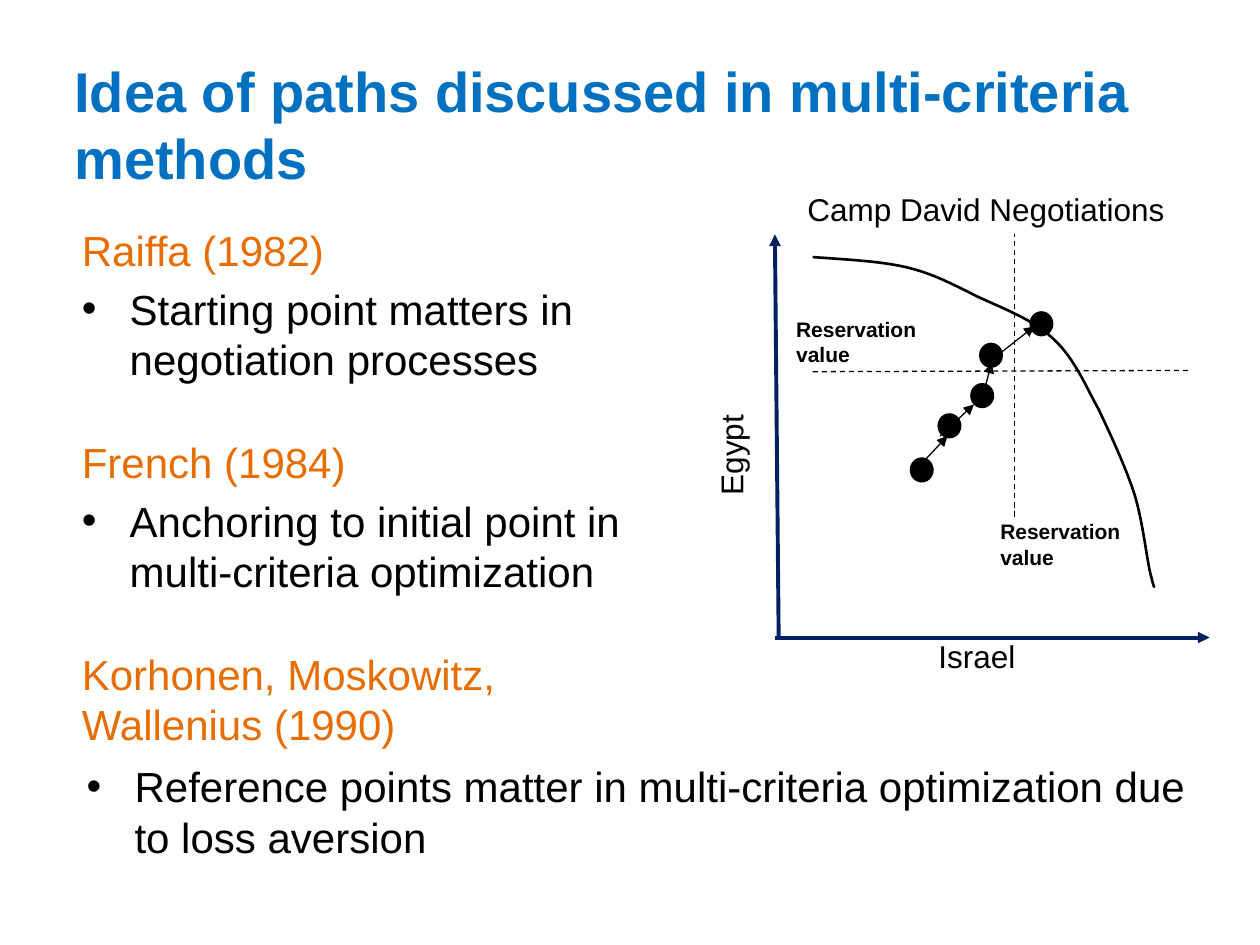
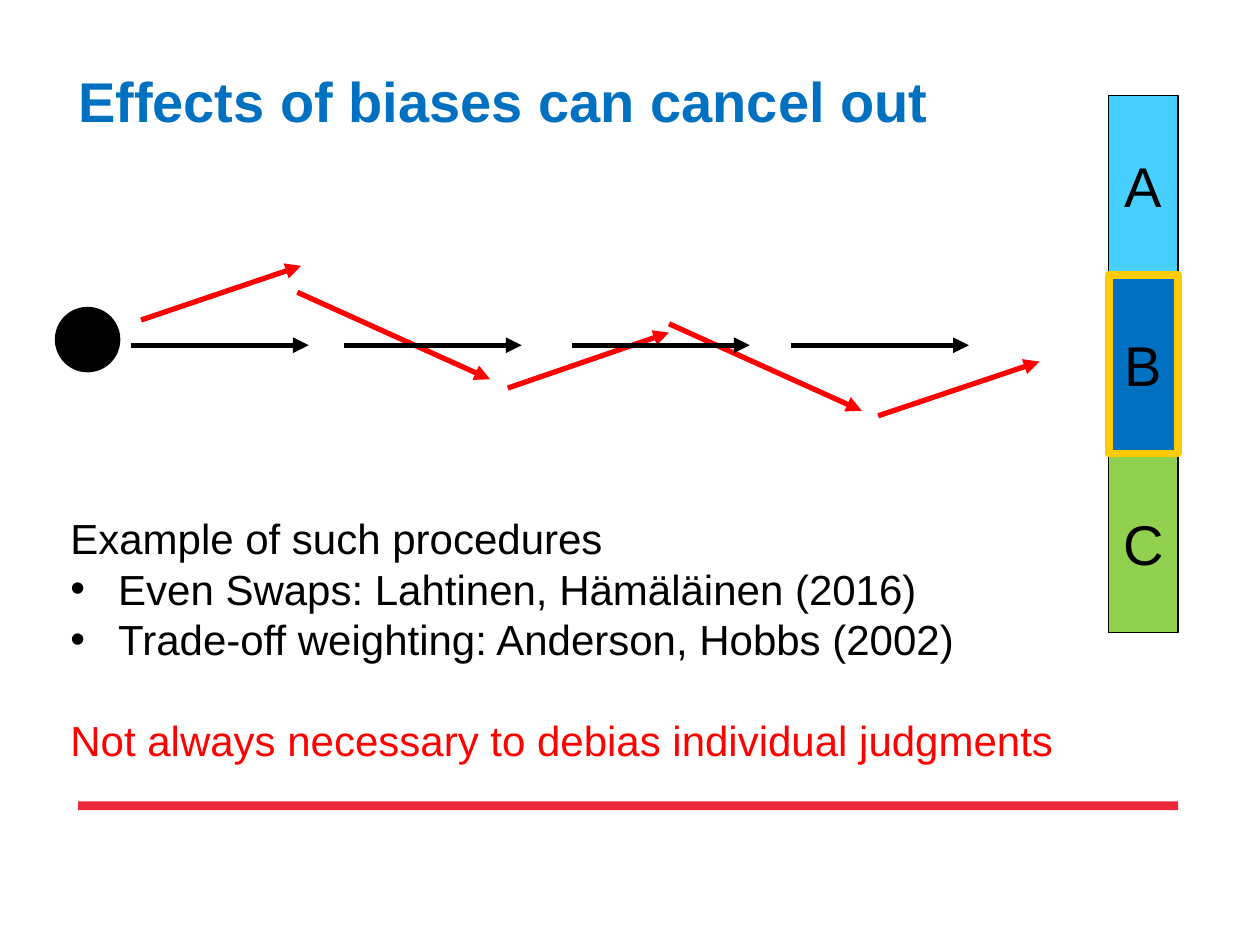
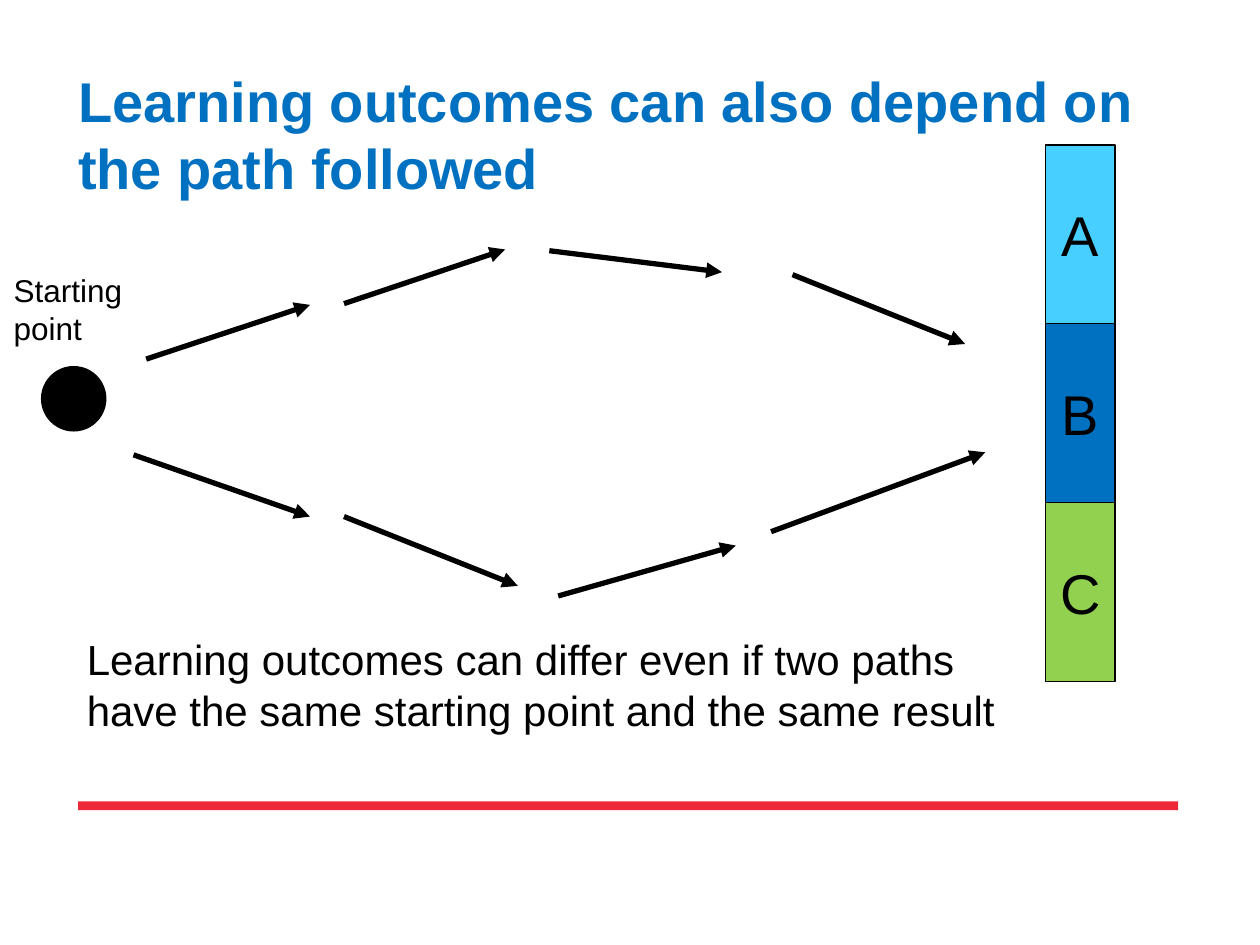
from lxml.etree import SubElement
from pptx import Presentation
from pptx.dml.color import RGBColor
from pptx.enum.dml import MSO_LINE
from pptx.enum.shapes import MSO_CONNECTOR, MSO_SHAPE
from pptx.enum.text import MSO_ANCHOR, PP_ALIGN
from pptx.oxml.ns import qn
from pptx.util import Inches, Pt

BLACK = RGBColor(0x00, 0x00, 0x00)
BLUE = RGBColor(0x00, 0x70, 0xC0)
ORANGE = RGBColor(0xE7, 0x6D, 0x00)
NAVY = RGBColor(0x00, 0x20, 0x60)
RED = RGBColor(0xFF, 0x00, 0x00)
BAND = RGBColor(0xED, 0x29, 0x39)
SKY = RGBColor(0x47, 0xCF, 0xFF)
GREEN = RGBColor(0x92, 0xD0, 0x50)
GOLD = RGBColor(0xFE, 0xCB, 0x00)

WIDE, HIGH = 10, 7.5
HEAD = {"size": Pt(32), "bold": True}
BODY = {"size": Pt(24), "bold": False}
LABEL = {"size": Pt(18), "bold": False}
SMALL = {"size": Pt(12), "bold": True}
LETTER = {"size": Pt(32), "bold": False}

# Paragraphs: text, colour, bulleted, space before in points
STUDIES = [
    ("Raiffa (1982)", ORANGE, False, 0),
    ("Starting point matters in negotiation processes", BLACK, True, 4.8),
    ("French (1984)", ORANGE, False, 30),
    ("Anchoring to initial point in multi-criteria optimization", BLACK, True, 4.8),
    ("Korhonen, Moskowitz, Wallenius (1990)", ORANGE, False, 30),
]
LOSS = [("Reference points matter in multi-criteria optimization due to loss aversion",
         BLACK, True, 0)]
CASES = [
    ("Example of such procedures", BLACK, False, 0),
    ("Even Swaps: Lahtinen, Hämäläinen (2016)", BLACK, True, 0),
    ("Trade-off weighting: Anderson, Hobbs (2002)", BLACK, True, 0),
    ("Not always necessary to debias individual judgments", RED, False, 28.8),
]
RESULT = [("Learning outcomes can differ even if two paths have the same "
           "starting point and the same result", BLACK, False, 0)]

# Chart labels: lines, box, format, direction
LABELS = [
    (["Camp David Negotiations"], (6.31, 1.46, 3.1, 0.4), LABEL, None),
    (["Israel"], (7.35, 5.01, 0.93, 0.48), LABEL, None),
    (["Egypt"], (5.6, 2.89, 0.74, 1.14), LABEL, "vert270"),
    (["Reservation", "value"], (6.22, 2.46, 1.21, 0.5), SMALL, None),
    (["Reservation", "value"], (7.84, 4.07, 1.21, 0.5), SMALL, None),
]
AXES = [((6.15, 5.06), (9.6, 5.06)), ((6.18, 5.06), (6.15, 1.86))]
LIMITS = [((6.45, 2.95), (9.45, 2.94)), ((8.05, 4.1), (8.05, 1.86))]
DOTS = [(7.22, 3.63), (7.44, 3.28), (7.7, 3.04), (7.77, 2.72), (8.17, 2.47)]
STEPS = [((7.24, 3.76), (7.52, 3.46)), ((7.46, 3.46), (7.73, 3.21)),
         ((7.82, 3.07), (7.87, 2.88)), ((7.93, 2.81), (8.21, 2.59))]
# Bezier knots: a start, then two handles and an end for each piece
FRONTIER = [
    (6.45, 2.04),
    (6.71, 2.06), (6.97, 2.07), (7.19, 2.12),
    (7.4, 2.17), (7.55, 2.25), (7.75, 2.35),
    (7.94, 2.44), (8.19, 2.53), (8.35, 2.68),
    (8.52, 2.83), (8.61, 3.05), (8.72, 3.25),
    (8.82, 3.46), (8.93, 3.7), (9, 3.91),
    (9.07, 4.13), (9.1, 4.43), (9.13, 4.55),
    (9.16, 4.67), (9.16, 4.66), (9.16, 4.65),
]

BIASED = [((2.36, 2.32), (3.89, 3.01)), ((1.12, 2.54), (2.39, 2.11)),
          ((4.03, 3.08), (5.31, 2.64)), ((5.31, 2.57), (6.84, 3.26)),
          ((6.97, 3.3), (8.25, 2.87))]
STRAIGHT = [((x, 2.74), (x + 1.41, 2.74)) for x in (1.04, 2.73, 4.54, 6.28)]
UPPER = [((1.16, 2.85), (2.46, 2.42)), ((2.73, 2.41), (4.01, 1.98)),
         ((4.36, 1.99), (5.73, 2.16)), ((6.29, 2.18), (7.66, 2.73))]
LOWER = [((1.06, 3.61), (2.46, 4.1)), ((2.73, 4.1), (4.11, 4.65)),
         ((4.43, 4.73), (5.84, 4.33)), ((6.12, 4.22), (7.82, 3.59))]

OPTIONS = [("A", SKY), ("B", BLUE), ("C", GREEN)]
CELL_W, CELL_H = 0.55, 1.42


def style(font, form, color):
    for key, value in {"name": "Arial", **form}.items():
        setattr(font, key, value)
    font.color.rgb = color


def write(slide, box, paras, form, inset=(0.1, 0.05), turn=None):
    """Add a text box; turn is the direction of its text."""
    frame = slide.shapes.add_textbox(*map(Inches, box)).text_frame
    frame.word_wrap = True
    frame.margin_left = frame.margin_right = Inches(inset[0])
    frame.margin_top = frame.margin_bottom = Inches(inset[1])
    if turn:
        frame._txBody.bodyPr.set("vert", turn)
    for i, (text, color, bullet, gap) in enumerate(paras):
        para = frame.add_paragraph() if i else frame.paragraphs[0]
        if bullet:
            props = para._p.get_or_add_pPr()
            props.set("marL", str(Inches(0.38)))
            props.set("indent", str(-Inches(0.38)))
            SubElement(props, qn("a:buFont"), typeface="Arial")
            SubElement(props, qn("a:buChar"), char="•")
        if gap:
            para.space_before = Pt(gap)
        run = para.add_run()
        run.text = text
        style(run.font, form, color)


def plain(lines):
    return [(line, BLACK, False, 0) for line in lines]


def draw(slide, kind, box, fill, line=None, width=0.75):
    shape = slide.shapes.add_shape(kind, *map(Inches, box))
    shape.shadow.inherit = False
    shape.fill.solid()
    shape.fill.fore_color.rgb = fill
    if line is None:
        shape.line.fill.background()
    else:
        shape.line.color.rgb = line
        shape.line.width = Pt(width)
    return shape


def link(slide, pairs, color=BLACK, width=3, dash=False):
    """Draw arrows, or dashed lines without heads."""
    for start, end in pairs:
        wire = slide.shapes.add_connector(
            MSO_CONNECTOR.STRAIGHT, *map(Inches, start + end))
        wire.line.color.rgb = color
        wire.line.width = Pt(width)
        if dash:
            wire.line.dash_style = MSO_LINE.DASH
        else:
            SubElement(wire.line._get_or_add_ln(), qn("a:tailEnd"), type="triangle")
        SubElement(wire._element.spPr, qn("a:effectLst"))


def curve(slide, knots, parts=12):
    """Draw a smooth open line through Bezier knots."""
    points = [knots[0]]
    for i in range(0, len(knots) - 1, 3):
        for n in range(1, parts + 1):
            t = n / parts
            rates = ((1 - t) ** 3, 3 * t * (1 - t) ** 2, 3 * t * t * (1 - t), t ** 3)
            points.append(tuple(
                sum(rate * knot[axis] for rate, knot in zip(rates, knots[i:i + 4]))
                for axis in (0, 1)))
    spots = [(Inches(x), Inches(y)) for x, y in points]
    build = slide.shapes.build_freeform(*spots[0])
    build.add_line_segments(spots[1:], close=False)
    shape = build.convert_to_shape()
    shape.shadow.inherit = False
    shape.fill.background()
    shape.line.color.rgb = BLACK
    shape.line.width = Pt(1.5)


def start(deck, title, box, band=True):
    """Add a slide with its title and band."""
    slide = deck.slides.add_slide(deck.slide_layouts[6])
    if band:
        draw(slide, MSO_SHAPE.RECTANGLE, (0.62, 6.36, 8.73, 0.07), BAND)
    write(slide, box, [(title, BLUE, False, 0)], HEAD, inset=(0, 0))
    return slide


def stack(slide, left, top, chosen=None):
    """Pile up the options, with the chosen one framed on top of the others."""
    rows = list(enumerate(OPTIONS))
    rows.sort(key=lambda row: row[1][0] == chosen)
    for i, (name, fill) in rows:
        edge = (GOLD, 4.5) if name == chosen else (BLACK, 0.75)
        cell = draw(slide, MSO_SHAPE.RECTANGLE,
                    (left, top + i * CELL_H, CELL_W, CELL_H), fill, *edge)
        frame = cell.text_frame
        frame.margin_left = frame.margin_right = 0
        frame.vertical_anchor = MSO_ANCHOR.MIDDLE
        para = frame.paragraphs[0]
        para.alignment = PP_ALIGN.CENTER
        run = para.add_run()
        run.text = name
        style(run.font, LETTER, BLACK)


def ideas(deck):
    slide = start(deck, "Idea of paths discussed in multi-criteria methods",
                  (0.59, 0.45, 9.38, 1.18), band=False)
    write(slide, (0.65, 1.78, 4.76, 3.7), STUDIES, BODY, inset=(0, 0))
    curve(slide, FRONTIER)
    link(slide, AXES, NAVY, 2.25)
    link(slide, LIMITS, width=0.75, dash=True)
    for lines, box, form, turn in LABELS:
        write(slide, box, plain(lines), form, turn=turn)
    for spot in DOTS:
        draw(slide, MSO_SHAPE.OVAL, spot + (0.19, 0.2), BLACK)
    link(slide, STEPS, width=0.75)
    write(slide, (0.59, 5.99, 9.2, 0.91), LOSS, BODY)


def biases(deck):
    slide = start(deck, "Effects of biases can cancel out", (0.62, 0.53, 8.1, 0.77))
    stack(slide, 8.8, 0.76, chosen="B")
    link(slide, BIASED, RED)
    draw(slide, MSO_SHAPE.OVAL, (0.44, 2.44, 0.51, 0.51), BLACK, BLACK)
    link(slide, STRAIGHT)
    write(slide, (0.46, 4.02, 8.18, 2.52), CASES, BODY)


def outcomes(deck):
    slide = start(deck, "Learning outcomes can also depend on the path followed",
                  (0.62, 0.53, 8.73, 1.18))
    stack(slide, 8.3, 1.15)
    link(slide, LOWER + UPPER)
    draw(slide, MSO_SHAPE.OVAL, (0.33, 2.91, 0.51, 0.51), BLACK, BLACK)
    write(slide, (0.01, 2.1, 1.14, 0.71), plain(["Starting", "point"]), LABEL)
    write(slide, (0.59, 4.98, 7.55, 1.21), RESULT, BODY)


def main():
    deck = Presentation()
    deck.slide_width, deck.slide_height = Inches(WIDE), Inches(HIGH)
    for make in (ideas, biases, outcomes):
        make(deck)
    deck.save("out.pptx")


if __name__ == "__main__":
    main()
